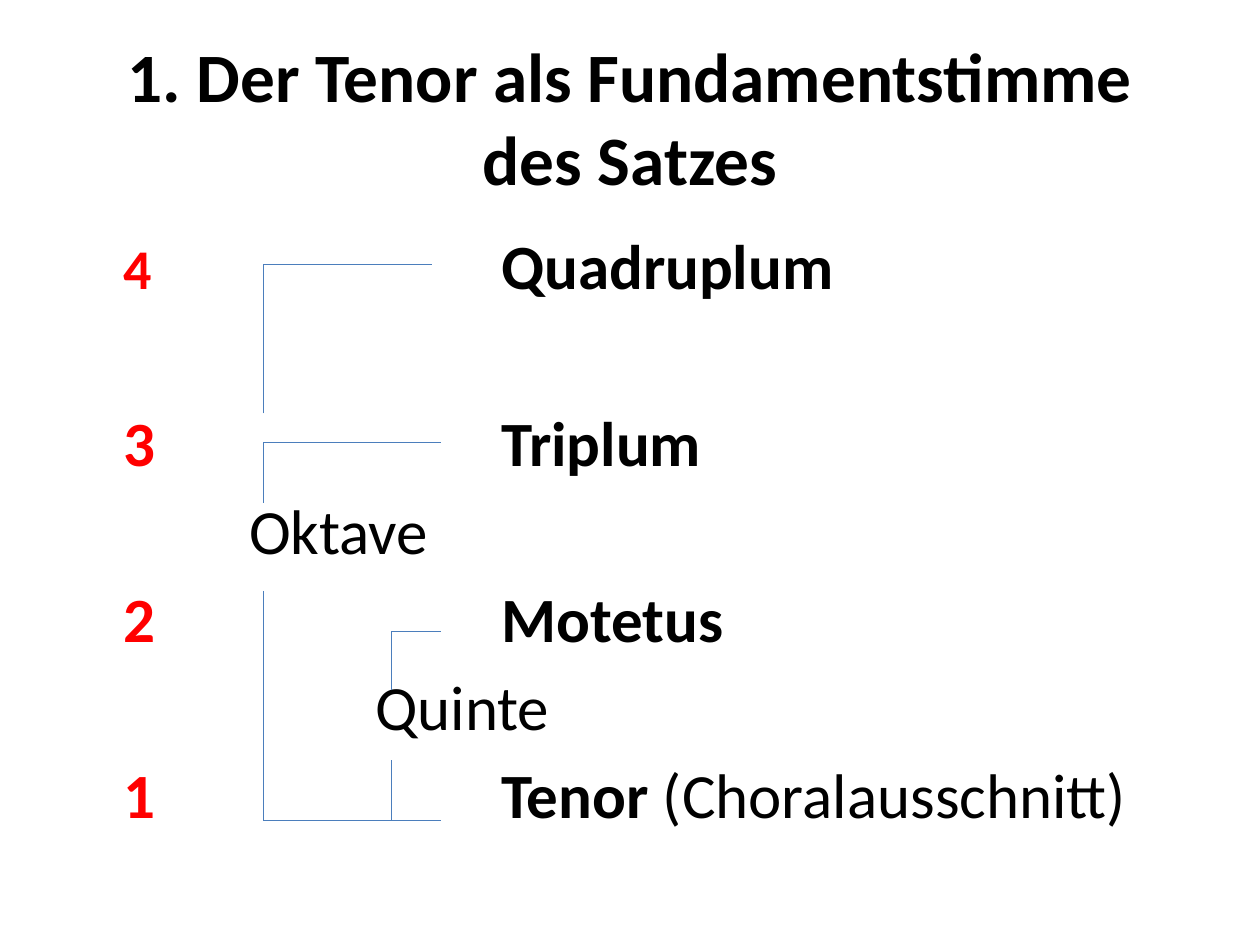
from lxml import etree
from pptx import Presentation, util as u
from pptx.dml.color import RGBColor
from pptx.enum import shapes, text
from pptx.oxml.ns import qn

BLACK, RED, BLUE = "000000", "FF0000", "4B7EBC"


def style(font, size, color, bold):
    look = {"name": "Calibri", "size": u.Pt(size), "bold": bold}
    for key, val in look.items():
        setattr(font, key, val)
    font.color.rgb = RGBColor.from_string(color)


deck = Presentation()
deck.slide_width, deck.slide_height = u.Inches(10), u.Inches(7.5)
slide = deck.slides.add_slide(deck.slide_layouts[5])

# Title
title = slide.shapes.title
place = {"left": 0.5, "top": 0.3, "width": 9, "height": 1.25}
for key, val in place.items():
    setattr(title, key, u.Inches(val))
frame = title.text_frame
frame.text = "1. Der Tenor als Fundamentstimme des Satzes"
frame.auto_size = text.MSO_AUTO_SIZE.NONE
frame.vertical_anchor = text.MSO_ANCHOR.MIDDLE
frame.paragraphs[0].alignment = text.PP_ALIGN.CENTER
style(frame.paragraphs[0].runs[0].font, 39.6, BLACK, True)

# Voices and intervals: number, name, plain remark, number size, space before
rows = [
    ("4", "Quadruplum", "", 32, 7.2),
    ("3", "Triplum", "", 36, 57.6),
    ("", "", "\t\tOktave", 36, 7.2),
    ("2", "Motetus", "", 36, 7.2),
    ("", "", "\t\t\tQuinte", 36, 7.2),
    ("1", "Tenor ", "(Choralausschnitt)", 36, 7.2),
]
box = slide.shapes.add_textbox(
    u.Inches(0.5), u.Inches(1.75), u.Inches(9), u.Inches(5.31))
frame = box.text_frame
frame.word_wrap = True
indent = {"marL": 0.38, "indent": -0.38, "defTabSz": 1}
for i, (num, name, note, size, gap) in enumerate(rows):
    para = frame.paragraphs[0] if i == 0 else frame.add_paragraph()
    para.space_before = u.Pt(gap)
    for key, val in indent.items():
        para._p.get_or_add_pPr().set(key, str(u.Inches(val)))
    lead = f"\t{num}\t\t\t" if num else ""
    parts = [(lead, size, RED, True), (name, 36, BLACK, True),
             (note, 36, BLACK, False)]
    for words, *look in parts:
        if words:
            run = para.add_run()
            run.text = words
            style(run.font, *look)

# Brackets: each is a chain of points joined by straight lines
left, inner, right = 2.09, 3.11, 3.5
chains = [
    [(left, 4.69), (left, 6.51), (right, 6.51)],
    [(inner, 6.51), (inner, 6.03)],
    [(inner, 5.48), (inner, 5.01), (right, 5.01)],
    [(left, 3.99), (left, 3.51), (right, 3.51)],
    [(left, 3.28), (left, 2.1), (3.43, 2.1)],
]
for chain in chains:
    for start, end in zip(chain, chain[1:]):
        line = slide.shapes.add_connector(
            shapes.MSO_CONNECTOR.STRAIGHT,
            *(u.Inches(v) for v in start + end))
        line.line.width = u.Pt(0.75)
        line.line.color.rgb = RGBColor.from_string(BLUE)
        etree.SubElement(line._element.spPr, qn("a:effectLst"))

deck.save("out.pptx")
